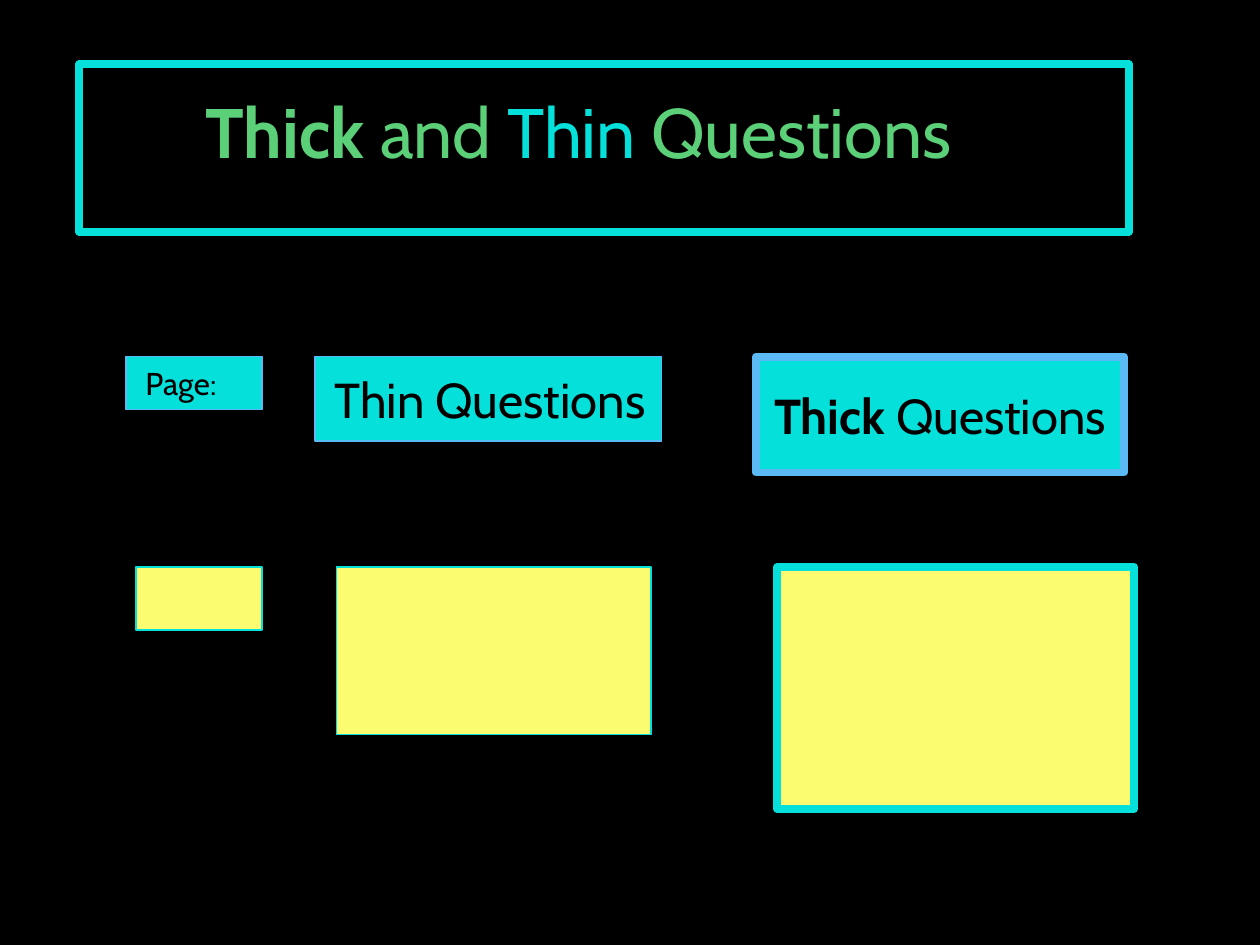
from pptx import Presentation
from pptx.dml.color import RGBColor
from pptx.enum import shapes, text
from pptx.util import Inches, Pt

BLACK, WHITE = "000000", "FFFFFF"
CYAN, BLUE, GREEN, YELLOW = "05E0DB", "5BBAF6", "5BD078", "FCFC70"
THIN, THICK = 1, 4.5
LABEL_TOP, ANSWER_TOP = 2.83, 4.5


def rgb(value):
    return RGBColor.from_string(value)


def add_run(p, content, size=28, color=BLACK, bold=False):
    r = p.add_run()
    r.text = content
    r.font.name = "Cabin"
    r.font.size = Pt(size)
    r.font.bold = bold
    r.font.color.rgb = rgb(color)


def add_box(slide, left, top, width, height, line, weight, fill=None):
    sp = slide.shapes.add_shape(
        shapes.MSO_SHAPE.RECTANGLE,
        Inches(left), Inches(top), Inches(width), Inches(height))
    sp.shadow.inherit = False
    if fill:
        sp.fill.solid()
        sp.fill.fore_color.rgb = rgb(fill)
    else:
        sp.fill.background()
    sp.line.color.rgb = rgb(line)
    sp.line.width = Pt(weight)
    return sp


def add_label(slide, left, width, height, weight, runs,
              align=text.PP_ALIGN.LEFT):
    sp = add_box(slide, left, LABEL_TOP, width, height, BLUE, weight, CYAN)
    tf = sp.text_frame
    tf.word_wrap = False
    tf.vertical_anchor = text.MSO_ANCHOR.MIDDLE
    p = tf.paragraphs[0]
    p.alignment = align
    for content, style in runs:
        add_run(p, content, **style)


def add_title(slide):
    sp = slide.shapes.add_textbox(
        Inches(0.39), Inches(0.25), Inches(8.4), Inches(1.17))
    tf = sp.text_frame
    tf.word_wrap = True
    tf.vertical_anchor = text.MSO_ANCHOR.BOTTOM
    p = tf.paragraphs[0]
    p.alignment = text.PP_ALIGN.CENTER
    p.space_before = Pt(4)
    add_run(p, "Thick", size=40, color=GREEN, bold=True)
    add_run(p, " and ", size=40, color=GREEN)
    add_run(p, "Thin ", size=40, color=CYAN)
    add_run(p, "Questions", size=40, color=GREEN)


def main():
    prs = Presentation()
    prs.slide_width, prs.slide_height = Inches(10), Inches(7.5)
    slide = prs.slides.add_slide(prs.slide_layouts[6])
    slide.background.fill.solid()
    slide.background.fill.fore_color.rgb = rgb(BLACK)

    add_title(slide)

    # Column labels
    add_label(slide, 1, 1.08, 0.42, THIN, [(" Page:", {"size": 18})])
    add_label(slide, 2.5, 2.75, 0.67, THIN,
              [(" ", {"size": 18, "color": WHITE}), ("Thin Questions", {})])
    add_label(slide, 6, 2.92, 0.92, THICK,
              [("Thick ", {"bold": True}), ("Questions", {})],
              align=text.PP_ALIGN.CENTER)

    # Answer areas
    for left, width, height, weight in [(1.08, 1, 0.5, THIN),
                                        (2.67, 2.5, 1.33, THIN),
                                        (6.17, 2.83, 1.92, THICK)]:
        add_box(slide, left, ANSWER_TOP, width, height, CYAN, weight, YELLOW)

    # Title frame
    add_box(slide, 0.63, 0.51, 8.33, 1.33, CYAN, THICK)

    prs.save("out.pptx")


if __name__ == "__main__":
    main()
